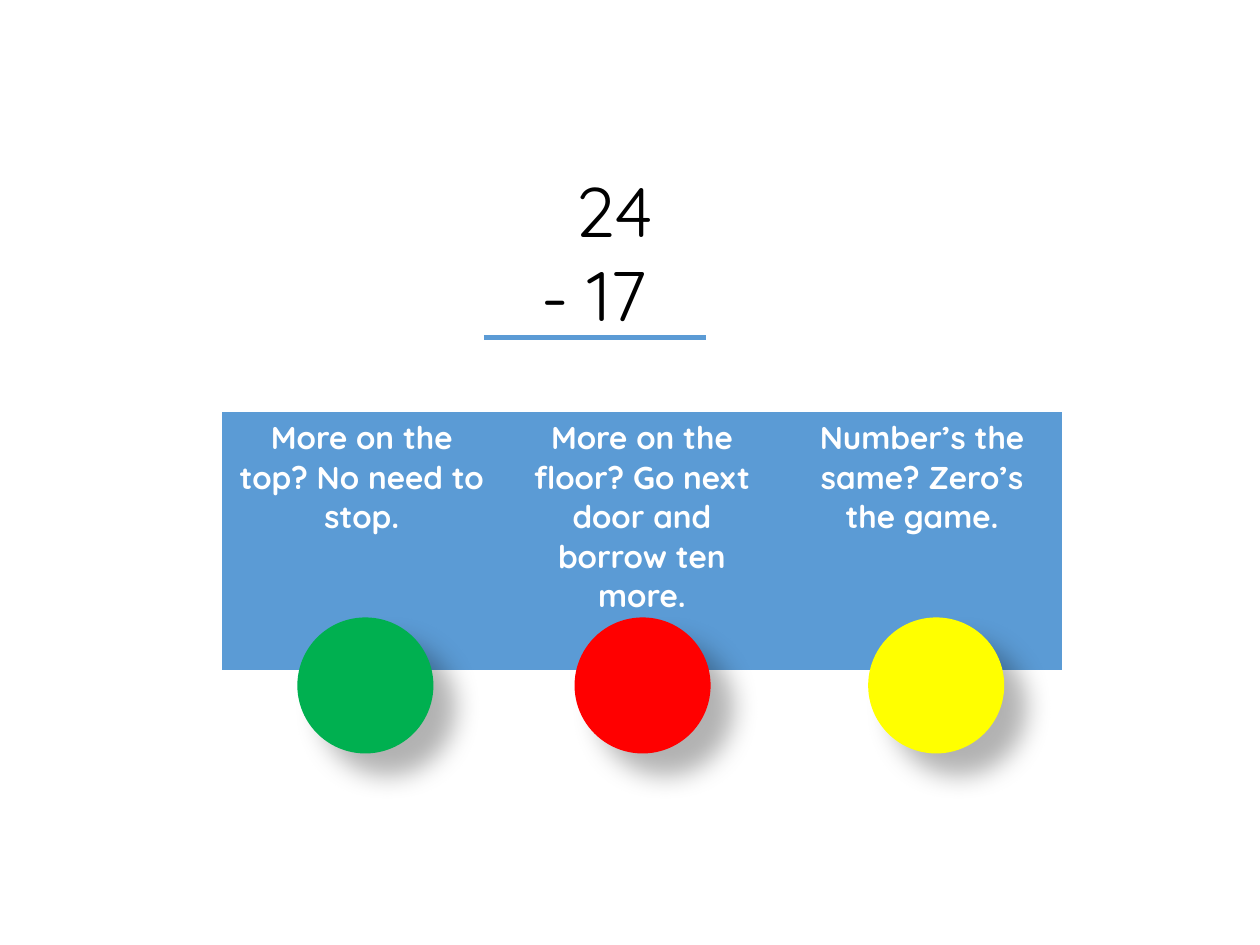
from lxml import etree
from pptx import Presentation
from pptx.dml.color import RGBColor
from pptx.enum.shapes import MSO_CONNECTOR, MSO_SHAPE
from pptx.enum.text import MSO_AUTO_SIZE, PP_ALIGN
from pptx.oxml import parse_xml
from pptx.oxml.ns import nsdecls, qn
from pptx.util import Inches, Pt

STRAIGHT = MSO_CONNECTOR.STRAIGHT
ELLIPSE = MSO_SHAPE.OVAL
CENTER = PP_ALIGN.CENTER
GROW = MSO_AUTO_SIZE.SHAPE_TO_FIT_TEXT

BLACK = RGBColor(0x00, 0x00, 0x00)
WHITE = RGBColor(0xFF, 0xFF, 0xFF)
BLUE = RGBColor(0x5B, 0x9B, 0xD5)
GREEN = RGBColor(0x00, 0xB0, 0x50)
RED = RGBColor(0xFF, 0x00, 0x00)
YELLOW = RGBColor(0xFF, 0xFF, 0x00)

FONT = "Quicksand"
SUM_FORMAT = {"name": FONT, "size": Pt(40)}
RHYME_FORMAT = {"name": FONT, "size": Pt(18), "bold": True}
PLAIN_TABLE_STYLE = "{2D5ABB26-0587-4C30-8999-92F81FD0307C}"
SHADOW = (
    f'<a:outerShdw {nsdecls("a")} blurRad="{Pt(15)}" dist="{Pt(18)}" '
    'dir="2700000" algn="tl" rotWithShape="0"><a:srgbClr val="000000">'
    '<a:alpha val="30000"/></a:srgbClr></a:outerShdw>'
)

RHYMES = [
    "More on the top? No need to stop.",
    "More on the floor? Go next door and borrow ten more.",
    "Number’s the same? Zero’s the game.",
]
COUNTERS = [(2.36, GREEN), (4.56, RED), (6.89, YELLOW)]


def write_para(para, text, color, values):
    """Fill a paragraph with centred text in the given format."""
    para.text = text
    para.alignment = CENTER
    for name, value in values.items():
        setattr(para.font, name, value)
    para.font.color.rgb = color


def add_subtraction(page, left, top, width, height):
    """Place the written subtraction and its answer line as one group."""
    group = page.shapes.add_group_shape()
    box = group.shapes.add_textbox(
        Inches(left), Inches(top), Inches(width), Inches(height))
    frame = box.text_frame
    frame.word_wrap = True
    frame.auto_size = GROW
    write_para(frame.paragraphs[0], "24", BLACK, SUM_FORMAT)
    frame.paragraphs[0]._p.get_or_add_pPr().set("marL", str(Inches(0.32)))
    write_para(frame.add_paragraph(), "- 17", BLACK, SUM_FORMAT)

    line_left, line_top = Inches(left + 0.45), Inches(top + 1.4)
    line = group.shapes.add_connector(
        STRAIGHT, line_left, line_top, line_left + Inches(1.76), line_top)
    line.line.color.rgb = BLUE
    line.line.width = Pt(3)
    etree.SubElement(line._element.spPr, qn("a:effectLst"))


def add_rhyme_table(page, left, top, width, height):
    """Place the three rhymes in one row of equal blue cells."""
    table = page.shapes.add_table(
        1, len(RHYMES), Inches(left), Inches(top),
        Inches(width), Inches(height)).table
    table.first_row = False
    table.horz_banding = False
    table._tbl.tblPr.find(qn("a:tableStyleId")).text = PLAIN_TABLE_STYLE
    for cell, rhyme in zip(table.iter_cells(), RHYMES):
        cell.fill.solid()
        cell.fill.fore_color.rgb = BLUE
        write_para(cell.text_frame.paragraphs[0], rhyme, WHITE, RHYME_FORMAT)


def add_counter(page, left, top, size, color):
    """Place a coloured counter with a soft shadow to the lower right."""
    counter = page.shapes.add_shape(
        ELLIPSE, Inches(left), Inches(top), Inches(size), Inches(size))
    counter.fill.solid()
    counter.fill.fore_color.rgb = color
    counter.line.fill.background()
    counter.shadow.inherit = False
    counter._element.spPr.find(qn("a:effectLst")).append(parse_xml(SHADOW))


def main():
    """Build the subtraction rhyme slide and save it."""
    deck = Presentation()
    deck.slide_width, deck.slide_height = Inches(10), Inches(7.5)
    page = deck.slides.add_slide(deck.slide_layouts[6])
    add_subtraction(page, 3.39, 1.28, 2.65, 1.45)
    add_rhyme_table(page, 1.76, 3.27, 6.67, 2.05)
    for left, color in COUNTERS:
        add_counter(page, left, 4.9, 1.08, color)
    deck.save("out.pptx")


if __name__ == "__main__":
    main()
